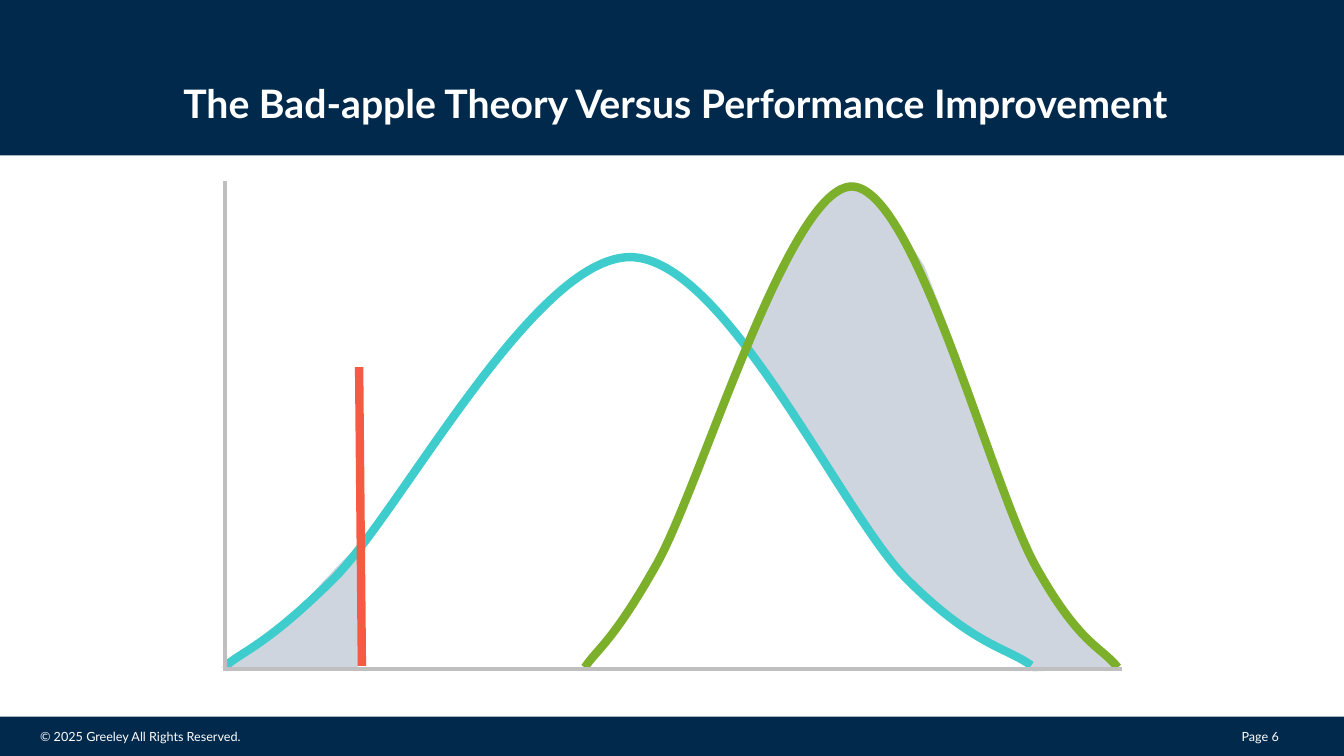
from lxml import etree
from pptx import Presentation
from pptx.dml.color import RGBColor
from pptx.enum.shapes import MSO_CONNECTOR as Link, MSO_SHAPE as Kind
from pptx.enum.text import MSO_ANCHOR as Anchor, MSO_AUTO_SIZE as Fit, PP_ALIGN as Align
from pptx.oxml.ns import qn
from pptx.util import Cm, Pt

WIDE, HIGH = 33.87, 19.05
NAVY, WHITE, SHADE, AXIS = "00294C", "FFFFFF", "CED5DF", "BFBFBF"
TEAL, GREEN, RED = "3ECCCC", "7CAF2A", "F45B42"

# Outlines in cm from the plot's corner: pairs are points, sixes are Bezier curves
TAIL = [(-0.1, 12.27), (1.6, 11.38, 2.26, 10.19, 3.45, 9.12), (3.35, 12.32)]
GAIN = [(13.11, 4.32), (14.6, 1.09), (15.32, 0.3), (15.88, 0.1), (16.69, 0.69),
        (17.63, 2.16), (18.47, 4.34), (19.13, 6.38), (19.99, 8.74), (20.8, 10.41),
        (21.34, 11.07), (22.53, 12.29), (20.35, 12.37),
        (20.22, 11.94, 19.86, 12.07, 19.63, 11.91),
        (18.19, 11), (16.76, 9.6), (15.06, 7.14), (14.3, 5.72)]
BEFORE = [(0.03, 12.22), (0.48, 11.84, 1.09, 11.68, 2.79, 9.98),
          (4.47, 8.26, 7.8, 1.93, 10.21, 1.93),
          (12.6, 1.93, 15.49, 8.31, 17.17, 10.03),
          (18.87, 11.73, 19.69, 11.76, 20.32, 12.22)]
AFTER = [(9.07, 12.27), (9.37, 11.81, 9.78, 11.63, 10.9, 9.63),
         (12.01, 7.62, 14.22, 0.15, 15.8, 0.15),
         (17.4, 0.18, 19.3, 7.67, 20.42, 9.7),
         (21.54, 11.71, 22.07, 11.73, 22.5, 12.27)]


def color(code):
    return RGBColor.from_string(code)


def write(frame, text, size, bold=False, space=None, anchor=Anchor.TOP):
    frame.word_wrap = True
    frame.auto_size = Fit.NONE
    frame.vertical_anchor = anchor
    para = frame.paragraphs[0]
    para.alignment = Align.LEFT
    para.line_spacing = space
    run = para.add_run()
    run.text = text
    font = run.font
    font.name, font.size, font.bold = "Lato", Pt(size), bold
    font.color.rgb = color(WHITE)


def band(slide, x, y, w, h):
    bar = slide.shapes.add_shape(Kind.RECTANGLE, Cm(x), Cm(y), Cm(w), Cm(h))
    bar.shadow.inherit = False
    bar.fill.solid()
    bar.fill.fore_color.rgb = color(NAVY)
    bar.line.fill.background()
    return bar


def bend(form, steps):
    """Merge the three straight lines of each six-number step into one curve."""
    lines = iter(list(form.element.iter(qn("a:lnTo"))))
    for step in steps[1:]:
        first = next(lines)
        if len(step) == 6:
            first.tag = qn("a:cubicBezTo")
            for other in (next(lines), next(lines)):
                first.append(other[0])
                other.getparent().remove(other)


def outline(slide, x, y, steps, fill=None, line=None):
    dots = [(Cm(x + step[i]), Cm(y + step[i + 1]))
            for step in steps for i in range(0, len(step), 2)]
    pen = slide.shapes.build_freeform(*dots[0], scale=1.0)
    pen.add_line_segments(dots[1:], close=False)
    form = pen.convert_to_shape()
    bend(form, steps)
    form.shadow.inherit = False
    if fill:
        track = next(form.element.iter(qn("a:moveTo"))).getparent()
        etree.SubElement(track, qn("a:close"))
        form.fill.solid()
        form.fill.fore_color.rgb = color(fill)
    else:
        form.fill.background()
    if line:
        form.line.color.rgb = color(line)
        form.line.width = Pt(6)
    else:
        form.line.fill.background()


def rule(slide, x, y, ends, tint, width):
    x1, y1, x2, y2 = ends
    bar = slide.shapes.add_connector(
        Link.STRAIGHT, Cm(x + x1), Cm(y + y1), Cm(x + x2), Cm(y + y2))
    bar.line.color.rgb = color(tint)
    bar.line.width = Pt(width)
    etree.SubElement(bar.element.spPr, qn("a:effectLst"))


def header(slide, x, y, w, h):
    bar = band(slide, x, y, w, h)
    title = slide.shapes.title
    bar.element.addnext(title.element)  # bring the title in front of its band
    title.left, title.top = Cm(x + 4.62), Cm(y)
    title.width, title.height = Cm(w - 5.4), Cm(h - 0.74)
    frame = title.text_frame
    frame.margin_left = frame.margin_right = 0
    frame.margin_top = frame.margin_bottom = 0
    write(frame, "The Bad-apple Theory Versus Performance Improvement", 28,
          bold=True, space=1.08, anchor=Anchor.BOTTOM)


def footer(slide, x, y, w, h):
    band(slide, x, y, w, h)
    notes = [("© 2025 Greeley All Rights Reserved.", 0.76, 11.38),
             ("Page 6", w - 2.83, 2.67)]
    for text, left, wide in notes:
        box = slide.shapes.add_textbox(Cm(x + left), Cm(y + 0.19), Cm(wide), Cm(0.66))
        write(box.text_frame, text, 9)


def plot(slide, x, y, w, h):
    # Shaded areas
    outline(slide, x, y, TAIL, fill=SHADE)
    outline(slide, x, y, GAIN, fill=SHADE)
    # Bell curves
    outline(slide, x, y, BEFORE, line=TEAL)
    outline(slide, x, y, AFTER, line=GREEN)
    # Cut-off and axes
    rule(slide, x, y, (3.45, h - 0.07, 3.38, 4.7), RED, 6)
    rule(slide, x, y, (0, 0, 0, h), AXIS, 3)
    rule(slide, x, y, (-0.05, h, w, h), AXIS, 3)


def main():
    deck = Presentation()
    deck.slide_width, deck.slide_height = Cm(WIDE), Cm(HIGH)
    slide = deck.slides.add_slide(deck.slide_layouts[5])
    slide.background.fill.solid()
    slide.background.fill.fore_color.rgb = color(WHITE)
    footer(slide, 0, HIGH - 0.99, WIDE, 0.99)
    header(slide, 0, 0, WIDE, 3.92)
    plot(slide, 5.67, 4.55, 22.6, 12.3)
    deck.save("out.pptx")


if __name__ == "__main__":
    main()
